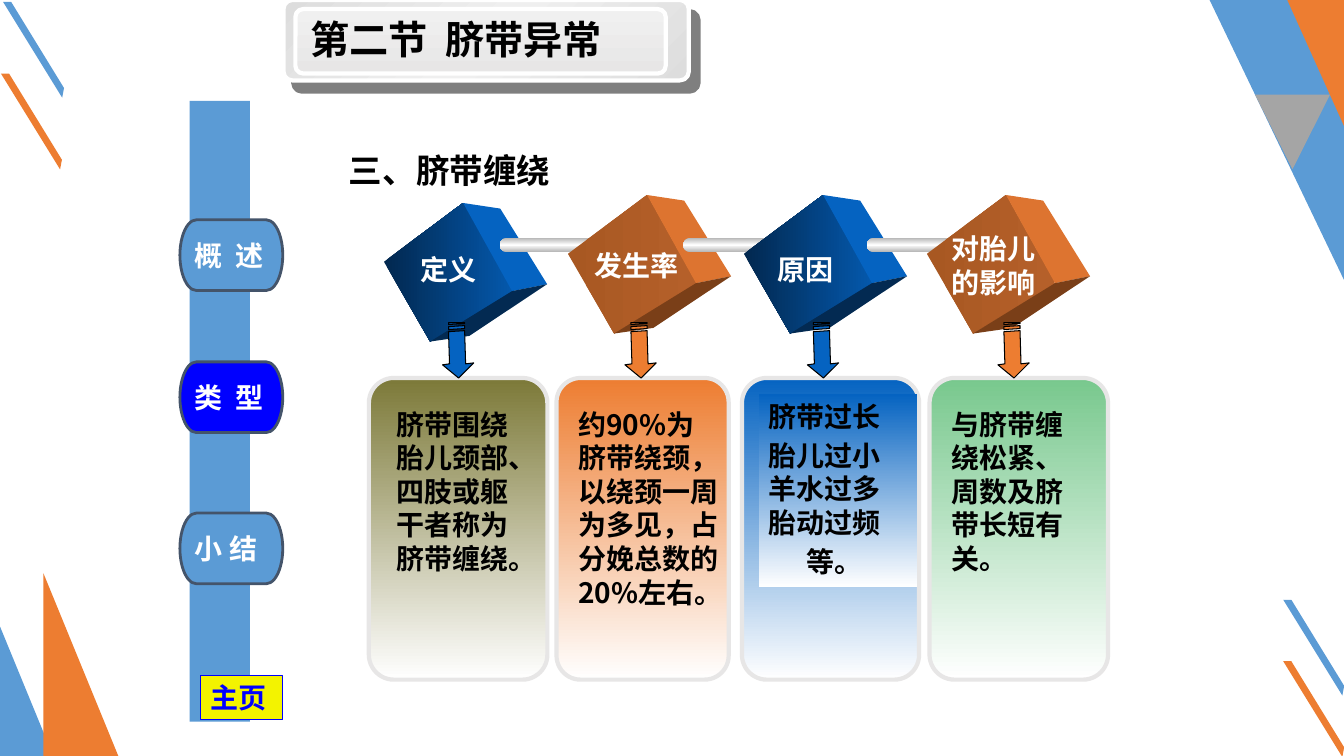
from lxml.etree import SubElement
from pptx import Presentation
from pptx.dml.color import RGBColor
from pptx.enum.shapes import MSO_SHAPE
from pptx.enum.text import MSO_ANCHOR, MSO_AUTO_SIZE, PP_ALIGN
from pptx.oxml.ns import qn
from pptx.util import Pt

HUES = {
    "sky": "5B9BD5", "orange": "ED7D31", "gray": "A5A5A5", "blue": "0563C1",
    "olive": "7C7938", "green": "78C88D", "white": "FFFFFF", "black": "000000",
    "pure": "0000FF", "yellow": "F3F300", "slate": "44546A", "edge": "E7E6E6",
    "steel": "B6B6B6", "plate": "DDDDDD", "shine": "EFEFEF", "pale": "F0F0F0",
    "navy": "02284F", "royal": "0458AC", "deep": "032A52",
    "rust": "A85822", "brick": "B5602A", "amber": "DD7430", "brown": "7A3F18",
}
NOTO, ARIAL, TIMES = "Noto Sans CJK SC", "Arial", "Times New Roman"
# Cube faces: front, side and bottom outlines from the cube's top left
FACES = [
    [(0, 42), (56.5, 0), (91.5, 63), (33, 99)],
    [(56.5, 0), (83, 4), (116.5, 58), (91.5, 63)],
    [(33, 99), (91.5, 63), (116.5, 58), (61, 95)],
]
CUBES = {
    "blue": [["navy", "royal"], "blue", "deep"],
    "orange": [["rust", "brick"], "amber", "brown"],
}
# Striped arrow: outlines measured from the tip
ARROW = [
    [(0, 0), (10.8, -10.8), (5, -10.1), (4.3, -33.8), (-7.2, -33.1),
     (-6.5, -10.1), (-11.5, -9.4)],
    [(4.3, -37.4), (-7.2, -36.7), (-7.2, -34.6), (4.3, -35.3)],
    [(4.3, -39.6), (-7.2, -39.6), (-7.2, -38.2), (4.3, -38.9)],
]
SLASH = [(0, 0), (5.8, 0), (43.5, 61.5), (42.2, 68.4)]


def rgb(name):
    return RGBColor.from_string(HUES[name])


def paint(shape, fill, line=None, width=1, angle=90):
    """Fill with one colour, or with a gradient if given a list."""
    shape.shadow.inherit = False
    if isinstance(fill, list):
        shape.fill.gradient()
        shape.fill.gradient_angle = 360 - angle
        stops = next(shape.element.iter(qn("a:gsLst")))
        for old in list(stops):
            stops.remove(old)
        for i, name in enumerate(fill):
            stop = SubElement(stops, qn("a:gs"), pos=str(i * 100000 // (len(fill) - 1)))
            SubElement(stop, qn("a:srgbClr"), val=HUES[name])
    else:
        shape.fill.solid()
        shape.fill.fore_color.rgb = rgb(fill)
    if line:
        shape.line.color.rgb = rgb(line)
        shape.line.width = Pt(width)
    else:
        shape.line.fill.background()


def block(slide, kind, box, fill, line=None, width=1, angle=90, bend=None):
    shape = slide.shapes.add_shape(kind, *map(Pt, box))
    if bend is not None:
        shape.adjustments[0] = bend
    paint(shape, fill, line, width, angle)
    return shape


def outline(slide, left, top, loops, fill, line=None, angle=90):
    spots = [[(Pt(left + x), Pt(top + y)) for x, y in loop] for loop in loops]
    pen = slide.shapes.build_freeform(*spots[0][0], scale=1)
    for i, loop in enumerate(spots):
        if i:
            pen.move_to(*loop[0])
        pen.add_line_segments(loop[1:], close=True)
    paint(pen.convert_to_shape(), fill, line, 0.75, angle)


def write(shape, lines, font, hue, size=20, anchor=MSO_ANCHOR.MIDDLE, gap=0, pitch=None):
    frame = shape.text_frame
    frame.word_wrap = True
    frame.auto_size = MSO_AUTO_SIZE.NONE
    frame.vertical_anchor = anchor
    frame.text = "\n".join(lines)
    for i, para in enumerate(frame.paragraphs):
        para.alignment = PP_ALIGN.LEFT
        para.space_before = Pt(gap if i else 0)
        if pitch:
            para.line_spacing = Pt(pitch)
        para.font.name, para.font.size, para.font.bold = font, Pt(size), True
        para.font.color.rgb = rgb(hue)
    return frame


def label(slide, box, lines, font, hue, **opts):
    return write(slide.shapes.add_textbox(*map(Pt, box)), lines, font, hue, **opts)


def place(shape, box):
    """Move a placeholder and bring it to the front."""
    shape.left, shape.top, shape.width, shape.height = map(Pt, box)
    shape.element.getparent().append(shape.element)


def decor(slide, wide, high):
    for x, y, hue in [(916.6, 428.4, "sky"), (0.7, 52.6, "orange"),
                      (2.2, 1.4, "sky"), (916.6, 472.3, "orange")]:
        outline(slide, x, y, [SLASH], hue)
    # Top right corner
    outline(slide, wide, 0, [[(-96, 0), (0, 0), (0, 200)]], "sky")
    outline(slide, wide, 0, [[(-40.5, 0), (0, 0), (0, 90)]], "orange")
    outline(slide, wide, 67.7, [[(-10, 0), (-36.8, 53.3), (-63.5, 0)]], "gray")
    # Bottom left corner
    outline(slide, 0, high, [[(0, -92.5), (38, 0), (0, 0)]], "sky")
    outline(slide, 31, high, [[(0, -130.5), (53.5, 0), (0, 0)]], "orange")


def header(slide, box):
    x, y, w, h = box
    plate = block(slide, MSO_SHAPE.ROUNDED_RECTANGLE, box,
                  ["plate", "shine", "plate"], "white", 3, 45, 0.11)
    cast = SubElement(plate.element.spPr.find(qn("a:effectLst")), qn("a:outerShdw"),
                      blurRad="0", dist=str(Pt(10.6)), dir=str(49 * 60000),
                      algn="ctr", rotWithShape="0")
    ink = SubElement(cast, qn("a:srgbClr"), val=HUES["black"])
    SubElement(ink, qn("a:alpha"), val="50000")
    block(slide, MSO_SHAPE.ROUNDED_RECTANGLE, (x + 8.5, y + 6.5, w - 25, h - 11.5),
          ["pale", "edge"], "white", 3, 90, 0.12)
    title = slide.shapes.title
    place(title, (x + 11, y + 7, w - 33, h - 16))
    frame = write(title, ["第二节  脐带异常"], NOTO, "black", 28)
    frame.margin_left = frame.margin_right = Pt(8)


def topic(slide, box):
    body = slide.placeholders[1]
    place(body, box)
    frame = write(body, ["三、脐带缠绕"], NOTO, "black", 24)
    props = frame.paragraphs[0].font and body.element.find(".//" + qn("a:pPr"))
    props.set("marL", "0")
    props.set("indent", "0")
    props.find(qn("a:defRPr")).addprevious(SubElement(props, qn("a:buNone")))


def menu(slide, box):
    x, y, w, h = box
    block(slide, MSO_SHAPE.RECTANGLE, box, "sky")
    for text, top, hue in [("概  述", 85, "sky"), ("类  型", 186.5, "pure"),
                           ("小 结", 294.5, "sky")]:
        pill = block(slide, MSO_SHAPE.FLOWCHART_TERMINATOR,
                     (x - 7, y + top, 73.5, 50.5), hue, "slate", 2)
        write(pill, [text], ARIAL, "white").margin_right = 0
    home = block(slide, MSO_SHAPE.RECTANGLE, (x + 8, y + h - 33, 58.5, 31.5),
                 "yellow", "pure", 0.75)
    write(home, ["主页"], ARIAL, "pure")


def card(slide, box, hue):
    block(slide, MSO_SHAPE.ROUNDED_RECTANGLE, box, [hue, "white"], "edge", 3, bend=0.14)


def cube(slide, left, top, hue):
    for face, fill in zip(FACES, CUBES[hue]):
        outline(slide, left, top, [face], fill, angle=0)


def chain(slide):
    heads = [
        (274.3, 145, "blue", (293, 176.4, 74, 31.7), ["定义"], 327.6),
        (405.7, 139.3, "orange", (417.6, 173.5, 91, 31.7), ["发生率"], 457.9),
        (531.4, 139.3, "blue", (548, 176.4, 68, 31.7), ["原因"], 588.2),
        (662.1, 139.3, "orange", (672.5, 162, 85, 55.4), ["对胎儿", "的影响"], 724.3),
    ]
    rods = [(357, 71), (488, 71), (619, 93)]
    # Cubes strung on rods
    for i, (left, top, hue, *_) in enumerate(heads):
        cube(slide, left, top, hue)
        if i < len(rods):
            x, w = rods[i]
            block(slide, MSO_SHAPE.ROUNDED_RECTANGLE, (x, 170, w, 10),
                  ["steel", "white", "steel"], bend=0.5)
    # Cube captions and arrows down to the cards
    for _, _, hue, box, lines, tip in heads:
        label(slide, box, lines, TIMES, "white", pitch=24)
        outline(slide, tip, 270, ARROW, hue, "black")


def notes(slide, top, high):
    for x, w, hue in [(263.5, 127.5, "olive"), (397.5, 123, "orange"),
                      (530, 126.5, "blue"), (664, 127.5, "green")]:
        card(slide, (x, top, w, high), hue)
    style = {"anchor": MSO_ANCHOR.TOP, "gap": 4, "pitch": 24}
    for x, w, font, text in [
        (275.8, 113, TIMES, "脐带围绕胎儿颈部、四肢或躯干者称为脐带缠绕。"),
        (406, 116, NOTO, "约90%为脐带绕颈，以绕颈一周为多见，占分娩总数的20%左右。"),
        (672.5, 113, TIMES, "与脐带缠绕松紧、周数及脐带长短有关。"),
    ]:
        label(slide, (x, top + 17.3, w, 152), [text], font, "black", **style)
    # Causes, on their own panel
    panel = block(slide, MSO_SHAPE.RECTANGLE, (542, top + 11.5, 113, 138), ["blue", "white"])
    frame = write(panel, ["脐带过长", "胎儿过小羊水过多胎动过频", "等。"],
                  TIMES, "black", **style)
    panel.element.findall(".//" + qn("a:pPr"))[len(frame.paragraphs) - 1].set("marL", str(Pt(27)))


def main():
    deck = Presentation()
    deck.slide_width, deck.slide_height = Pt(960), Pt(540)
    slide = deck.slides.add_slide(deck.slide_layouts[1])
    decor(slide, 960, 540)
    topic(slide, (242, 96, 547, 51))
    header(slide, (202.5, 0, 289.5, 57.5))
    menu(slide, (135.5, 72, 43, 443.5))
    notes(slide, 270, 215.5)
    chain(slide)
    deck.save("out.pptx")


if __name__ == "__main__":
    main()
